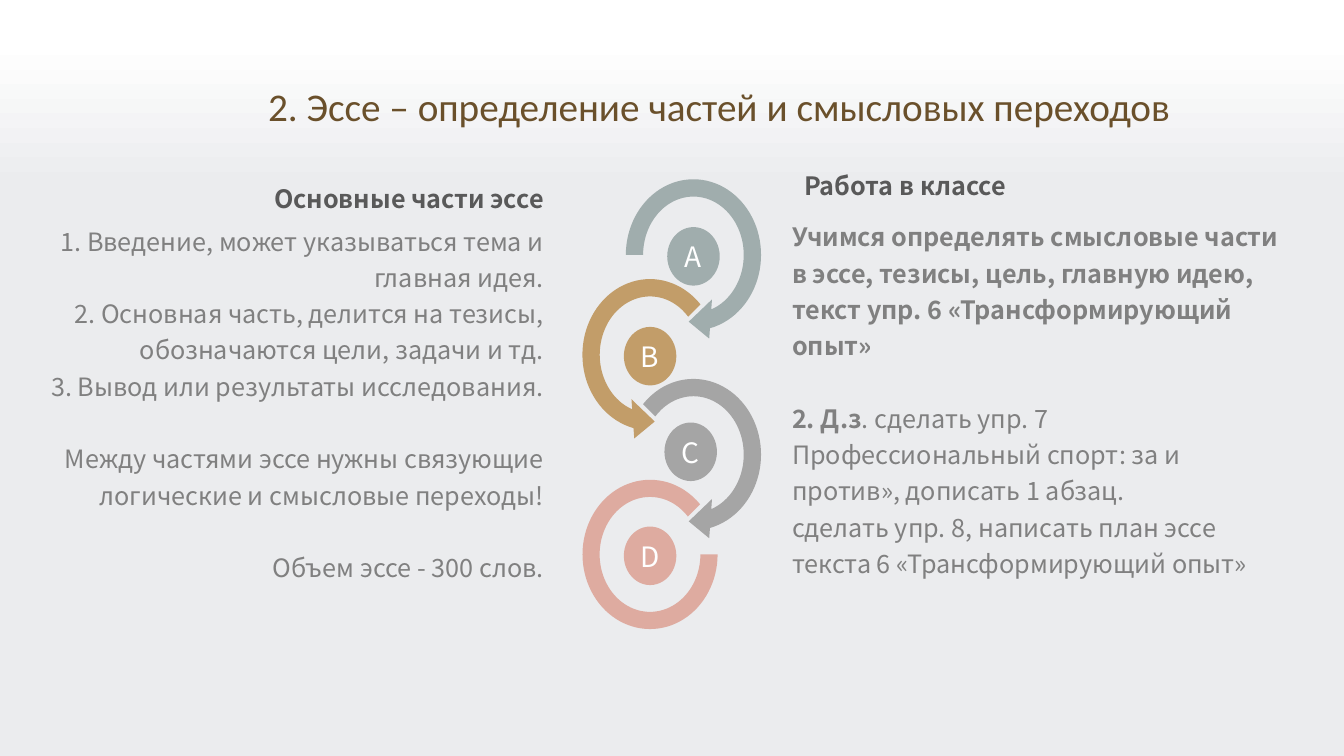
from pptx import Presentation
from pptx.dml.color import RGBColor
from pptx.enum.shapes import MSO_SHAPE as SHAPE
from pptx.enum.text import MSO_ANCHOR as ANCHOR, PP_ALIGN as ALIGN
from pptx.util import Pt

WHITE = RGBColor(0xFF, 0xFF, 0xFF)
MIST = RGBColor(0xEB, 0xEC, 0xEE)
BROWN = RGBColor(0x6A, 0x50, 0x2B)
DARK = RGBColor(0x59, 0x59, 0x59)
GREY = RGBColor(0x80, 0x80, 0x80)
SAGE = RGBColor(0xA0, 0xAD, 0xAD)
OCHRE = RGBColor(0xC2, 0x9D, 0x69)
SILVER = RGBColor(0xA5, 0xA5, 0xA5)
ROSE = RGBColor(0xDE, 0xAB, 0xA0)

BODY_FONT = "Noto Sans CJK SC"
SLIDE_W, SLIDE_H = 960, 540
BLANK_LINE = 26

LEFT_PARTS = [
    ("1. Введение, может указываться тема и главная идея.", 0),
    ("2. Основная часть, делится на тезисы, обозначаются цели, задачи и тд.", 0),
    ("3. Вывод или результаты исследования.", 0),
    ("Между частями эссе нужны связующие логические и смысловые переходы!", BLANK_LINE),
    ("Объем эссе - 300 слов.", BLANK_LINE),
]
CLASS_TASK = ("Учимся определять смысловые части в эссе, тезисы, цель, главную идею, "
              "текст упр. 6 «Трансформирующий опыт»")
HOMEWORK = ". сделать упр. 7 Профессиональный спорт: за и против», дописать 1 абзац."
HOMEWORK_PLAN = "сделать упр. 8, написать план эссе текста 6 «Трансформирующий опыт»"


def add_run(p, text, size=18, color=GREY, bold=False, font=BODY_FONT):
    r = p.add_run()
    r.text = text
    r.font.name, r.font.size, r.font.bold = font, Pt(size), bold
    r.font.color.rgb = color


def write(tf, text, align=ALIGN.LEFT, spacing=1.2, before=0, **fmt):
    """Append a paragraph, using the empty first one when there is no text yet."""
    p = tf.add_paragraph() if tf.text else tf.paragraphs[0]
    p.alignment, p.line_spacing = align, spacing
    if before:
        p.space_before = Pt(before)
    add_run(p, text, **fmt)
    return p


def add_box(s, left, top, width, height, anchor=ANCHOR.TOP):
    tf = s.shapes.add_textbox(Pt(left), Pt(top), Pt(width), Pt(height)).text_frame
    tf.word_wrap = True
    tf.vertical_anchor = anchor
    return tf


def add_plain_shape(s, kind, left, top, width, height, color):
    sp = s.shapes.add_shape(kind, Pt(left), Pt(top), Pt(width), Pt(height))
    sp.shadow.inherit = False
    sp.fill.solid()
    sp.fill.fore_color.rgb = color
    sp.line.fill.background()
    return sp


def add_backdrop(s, fade_top, fade_height):
    fade = add_plain_shape(s, SHAPE.RECTANGLE, 0, fade_top, SLIDE_W, fade_height, MIST)
    fade.fill.gradient()
    fade.fill.gradient_angle = 270
    for stop, color in zip(fade.fill.gradient_stops, (WHITE, MIST)):
        stop.color.rgb = color
    floor = fade_top + fade_height
    add_plain_shape(s, SHAPE.RECTANGLE, 0, floor, SLIDE_W, SLIDE_H - floor, MIST)


def add_title(s, left, top, width, height):
    tf = add_box(s, left, top, width, height, ANCHOR.MIDDLE)
    write(tf, "2. Эссе – определение частей и смысловых переходов",
          spacing=0.9, size=28, color=BROWN, font="Calibri")


def add_left_column(s, left, top, width, height):
    head = add_box(s, left + 107, top, width - 107, 31)
    write(head, "Основные части эссе", align=ALIGN.RIGHT, color=DARK, bold=True)
    body = add_box(s, left, top + 30.5, width, height - 30.5)
    for text, before in LEFT_PARTS:
        write(body, text, align=ALIGN.RIGHT, before=before)


def add_right_column(s, left, top, width, height):
    head = add_box(s, left + 8.5, top, width - 27, 31)
    write(head, "Работа в классе", align=ALIGN.JUSTIFY, color=DARK, bold=True)
    body = add_box(s, left, top + 36.5, width, height - 36.5)
    write(body, CLASS_TASK, bold=True)
    p = write(body, "2. Д.з", before=BLANK_LINE, bold=True)
    add_run(p, HOMEWORK)
    write(body, HOMEWORK_PLAN)


def add_chain(s, left, top):
    """Four interlocking rings, swinging right and left in turn."""
    arrow, arc, disc, step, swing = (112.3, 123.8), (96.5, 106.6), (37.5, 41.8), 71.3, 31
    right, left_turn = SHAPE.CIRCULAR_ARROW, SHAPE.LEFT_CIRCULAR_ARROW
    # letter, colour, shape, size, adjustments, disc shift
    links = [
        ("A", SAGE, right, arrow, (0.11, 11.42, 45, 108, 0.125), (0, 1)),
        ("B", OCHRE, left_turn, arrow, (0.11, 11.42, 63, 189, 0.125), (0, 1)),
        ("C", SILVER, right, arrow, (0.11, 11.42, 45, 135, 0.125), (-2, -2)),
        ("D", ROSE, SHAPE.BLOCK_ARC, arc, (0, 189, 0.127), (0, 1)),
    ]
    for i, (letter, color, kind, (w, h), adjustments, (dx, dy)) in enumerate(links):
        cx = left + arrow[0] / 2 + (swing if i % 2 == 0 else 0)
        cy = top + arrow[1] / 2 + i * step
        ring = add_plain_shape(s, kind, cx - w / 2, cy - h / 2, w, h, color)
        for n, value in enumerate(adjustments):
            ring.adjustments[n] = value
        dw, dh = disc
        badge = add_plain_shape(s, SHAPE.OVAL, cx + dx - dw / 2, cy + dy - dh / 2, dw, dh, color)
        tf = badge.text_frame
        tf.margin_left = tf.margin_right = tf.margin_top = tf.margin_bottom = 0
        tf.vertical_anchor = ANCHOR.MIDDLE
        write(tf, letter, align=ALIGN.CENTER, spacing=1, size=20, color=WHITE)


def main():
    prs = Presentation()
    prs.slide_width, prs.slide_height = Pt(SLIDE_W), Pt(SLIDE_H)
    s = prs.slides.add_slide(prs.slide_layouts[6])
    add_backdrop(s, 29, 104)
    add_title(s, 184.5, 57.5, 709, 41)
    add_chain(s, 408.2, 120.2)
    add_right_column(s, 558.7, 114, 366.5, 319)
    add_left_column(s, 6.5, 123, 389, 315.5)
    prs.save("out.pptx")


if __name__ == "__main__":
    main()
